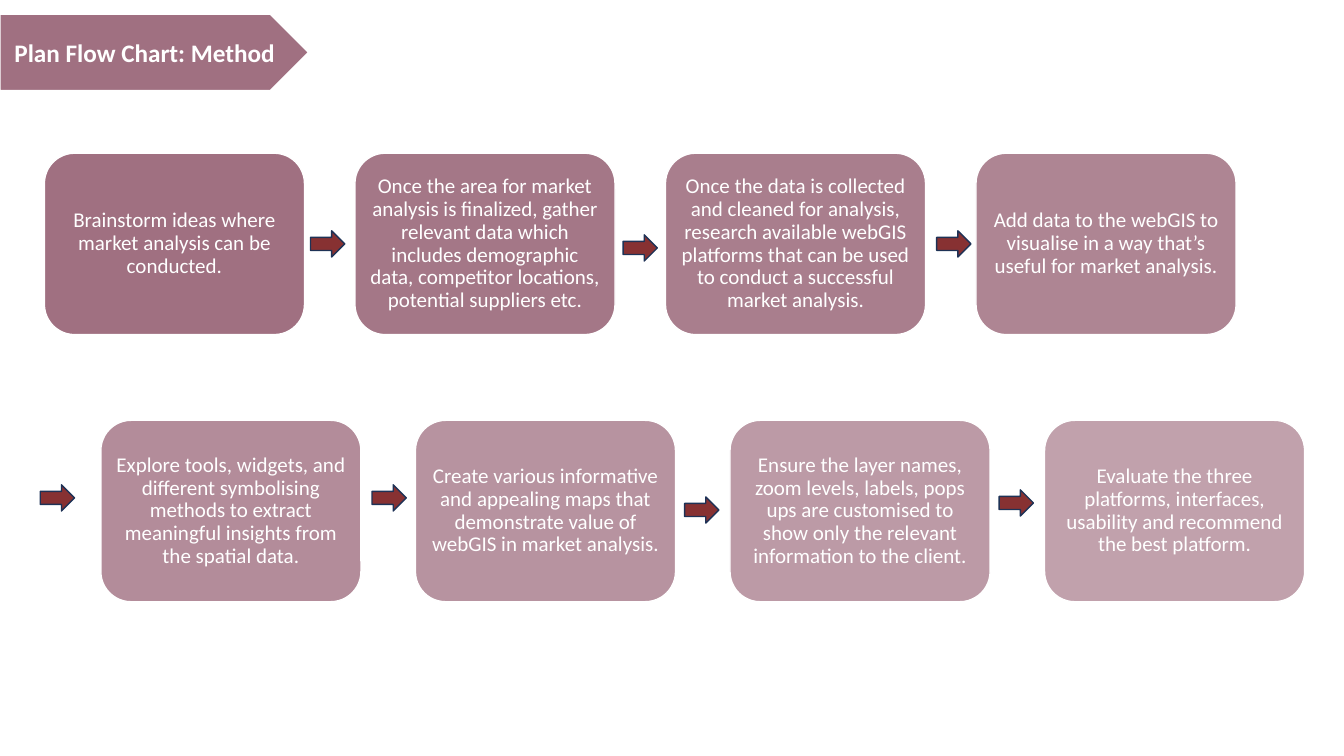
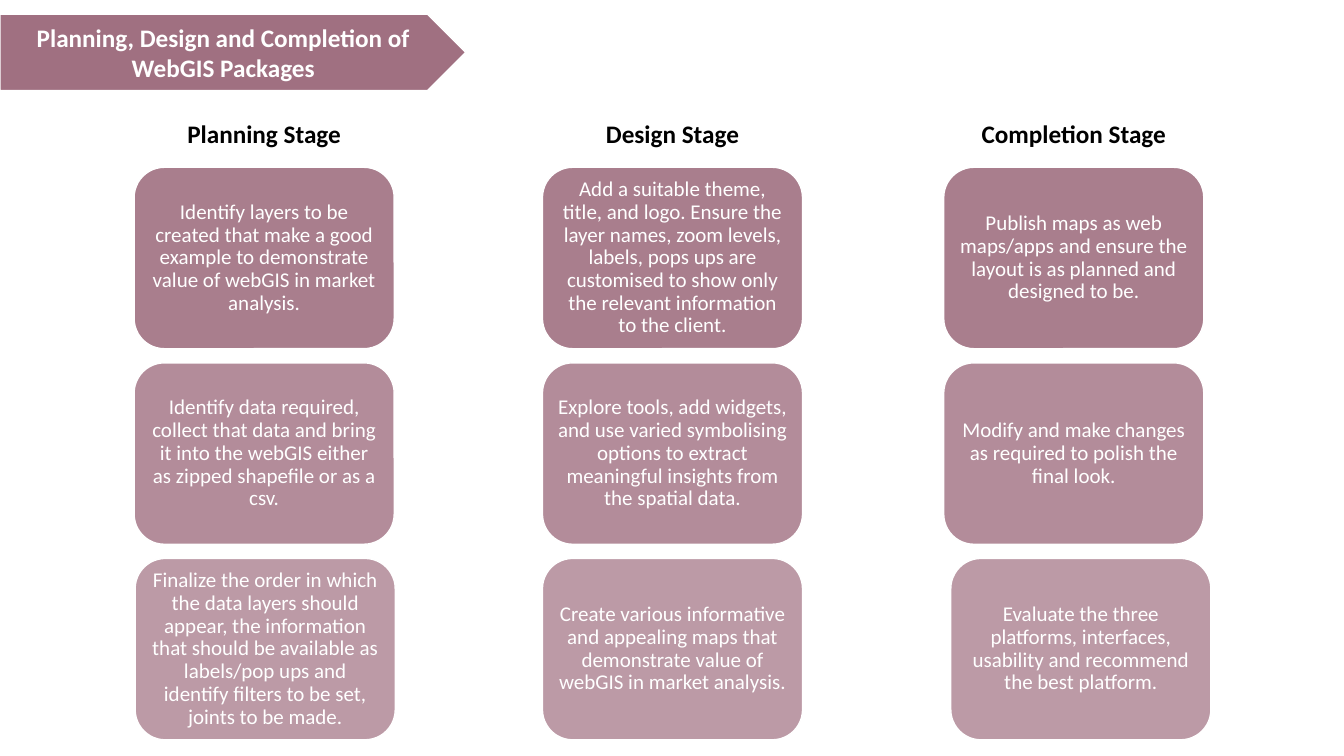
from dataclasses import dataclass

from lxml import etree
from pptx import Presentation
from pptx.dml.color import RGBColor
from pptx.enum import shapes, text
from pptx.oxml.ns import qn
from pptx.util import Inches, Pt


@dataclass(frozen=True)
class Theme:
    font: str = "Calibri"
    mauve: RGBColor = RGBColor(0xA0, 0x70, 0x81)
    red: RGBColor = RGBColor(0x87, 0x31, 0x32)
    navy: RGBColor = RGBColor(0x1E, 0x32, 0x56)
    white: RGBColor = RGBColor(0xFF, 0xFF, 0xFF)
    black: RGBColor = RGBColor(0, 0, 0)
    heading_size: int = 18
    body_size: int = 15


THEME = Theme()
TITLE_ONLY = 5
CARD_W, CARD_H = 2.58, 1.8
BANNER_TOP, BANNER_H = 0.14, 0.76

METHOD_ROWS = [
    # left, top, step between cards, texts
    (0.44, 1.52, 3.08, [
        "Brainstorm ideas where market analysis can be conducted.",
        "Once the area for market analysis is finalized, gather relevant data "
        "which includes demographic data, competitor locations, potential "
        "suppliers etc.",
        "Once the data is collected and cleaned for analysis, research "
        "available webGIS platforms that can be used to conduct a successful "
        "market analysis.",
        "Add data to the webGIS to visualise in a way that’s useful for "
        "market analysis.",
    ]),
    (1, 4.17, 3.12, [
        "Explore tools, widgets, and different symbolising methods to extract "
        "meaningful insights from the spatial data.",
        "Create various informative and appealing maps that demonstrate value "
        "of webGIS in market analysis.",
        "Ensure the layer names, zoom levels, labels, pops ups are customised "
        "to show only the relevant information to the client.",
        "Evaluate the three platforms, interfaces, usability and recommend "
        "the best platform.",
    ]),
]
ARROWS = [(3.08, 2.29), (6.18, 2.33), (9.29, 2.29),
          (0.4, 4.81), (3.69, 4.81), (6.79, 4.93), (9.91, 4.86)]

STAGES = [
    # heading, left of each card, texts
    ("Planning Stage", (1.33, 1.33, 1.34), [
        "Identify layers to be created that make a good example to "
        "demonstrate value of webGIS in market analysis.",
        "Identify data required, collect that data and bring it into the "
        "webGIS either as zipped shapefile or as a csv.",
        "Finalize the order in which the data layers should appear, the "
        "information that should be available as labels/pop ups and identify "
        "filters to be set, joints to be made.",
    ]),
    ("Design Stage", (5.38, 5.38, 5.38), [
        "Add a suitable theme, title, and logo. Ensure the layer names, zoom "
        "levels, labels, pops ups are customised to show only the relevant "
        "information to the client.",
        "Explore tools, add widgets, and use varied symbolising options to "
        "extract meaningful insights from the spatial data.",
        "Create various informative and appealing maps that demonstrate value "
        "of webGIS in market analysis.",
    ]),
    ("Completion Stage", (9.36, 9.36, 9.43), [
        "Publish maps as web maps/apps and ensure the layout is as planned "
        "and designed to be.",
        "Modify and make changes as required to polish the final look.",
        "Evaluate the three platforms, interfaces, usability and recommend "
        "the best platform.",
    ]),
]


def add_box(s, kind, left, top, width, height, fill, line):
    sp = s.shapes.add_shape(kind, Inches(left), Inches(top),
                            Inches(width), Inches(height))
    sp.shadow.inherit = False
    sp.fill.solid()
    sp.fill.fore_color.rgb = fill
    sp.line.color.rgb = line
    sp.line.width = Pt(1)
    return sp


def set_opacity(sp, percent):
    color = sp._element.spPr.find(qn("a:solidFill"))[0]
    etree.SubElement(color, qn("a:alpha"), val=str(percent * 1000))


def write(tf, words, size, color, bold=False):
    """Fill a text frame with one centred paragraph."""
    tf.word_wrap = True
    tf.auto_size = text.MSO_AUTO_SIZE.NONE
    p = tf.paragraphs[0]
    p.alignment = text.PP_ALIGN.CENTER
    r = p.add_run()
    r.text = words
    r.font.name = THEME.font
    r.font.size = Pt(size)
    r.font.bold = bold
    r.font.color.rgb = color
    return p


def add_titled_slide(prs, title, banner_width):
    s = prs.slides.add_slide(prs.slide_layouts[TITLE_ONLY])
    banner = add_box(s, shapes.MSO_SHAPE.PENTAGON, 0, BANNER_TOP,
                     banner_width, BANNER_H, THEME.mauve, THEME.white)
    sp = s.shapes.title
    sp._element.addprevious(banner._element)
    sp.left, sp.top = 0, Inches(BANNER_TOP)
    # The text stops halfway along the banner's point.
    sp.width, sp.height = Inches(banner_width - BANNER_H / 4), Inches(BANNER_H)
    sp.text_frame.vertical_anchor = text.MSO_ANCHOR.MIDDLE
    write(sp.text_frame, title, THEME.heading_size, THEME.white, bold=True)
    return s


def add_card(s, left, top, words, opacity):
    sp = add_box(s, shapes.MSO_SHAPE.ROUNDED_RECTANGLE, left, top,
                 CARD_W, CARD_H, THEME.mauve, THEME.white)
    set_opacity(sp, opacity)
    tf = sp.text_frame
    tf.margin_left = tf.margin_right = Inches(0.06)
    tf.margin_top = tf.margin_bottom = Inches(0.06)
    tf.vertical_anchor = text.MSO_ANCHOR.MIDDLE
    write(tf, words, THEME.body_size, THEME.white).line_spacing = 0.9


def add_heading(s, left, words):
    sp = s.shapes.add_textbox(Inches(left), Inches(1.12),
                              Inches(CARD_W), Inches(0.4))
    write(sp.text_frame, words, THEME.heading_size, THEME.black, bold=True)


def build_method(prs):
    s = add_titled_slide(prs, "Plan Flow Chart: Method", 3.06)
    opacity = 100
    for left, top, step, texts in METHOD_ROWS:
        for i, words in enumerate(texts):
            add_card(s, left + i * step, top, words, opacity)
            opacity -= 5
    for left, top in ARROWS:
        add_box(s, shapes.MSO_SHAPE.RIGHT_ARROW, left, top, 0.34, 0.26,
                THEME.red, THEME.navy)


def build_stages(prs):
    s = add_titled_slide(
        prs, "Planning, Design and Completion of WebGIS Packages", 4.62)
    for heading, lefts, texts in STAGES:
        add_heading(s, lefts[0], heading)
        for i, (left, words) in enumerate(zip(lefts, texts)):
            add_card(s, left, 1.66 + i * 1.94, words, 90 - i * 10)


def main():
    prs = Presentation()
    prs.slide_width, prs.slide_height = Inches(13.33), Inches(7.5)
    build_method(prs)
    build_stages(prs)
    prs.save("out.pptx")


if __name__ == "__main__":
    main()
